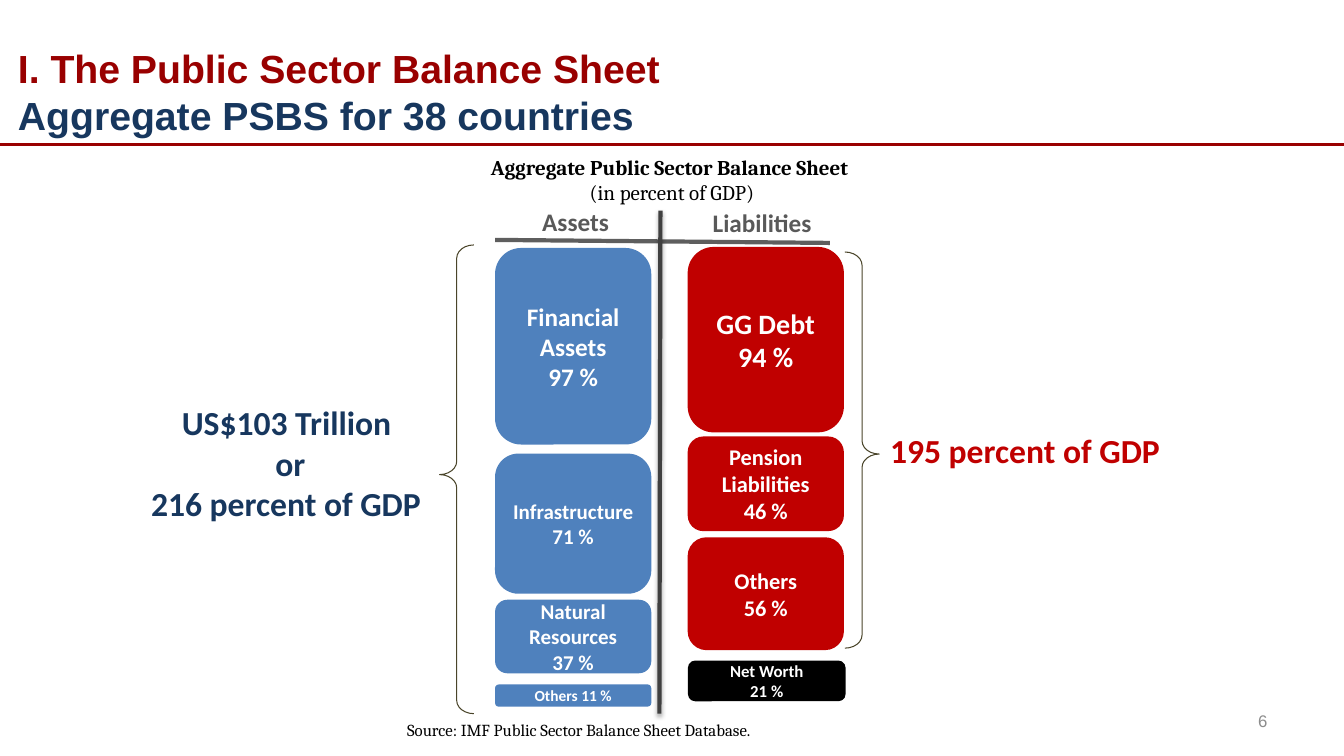
"""Build the aggregate public sector balance sheet slide."""
from lxml.etree import SubElement
from pptx import Presentation
from pptx.dml.color import RGBColor
from pptx.enum.shapes import MSO_CONNECTOR, MSO_SHAPE
from pptx.enum.text import MSO_ANCHOR, PP_ALIGN
from pptx.oxml.ns import qn
from pptx.util import Inches, Pt

COLORS = {
    "crimson": "990000", "navy": "17375E", "black": "000000", "white": "FFFFFF",
    "heading": "595959", "rule": "5E5E5E", "divider": "404040", "brace": "4A452A",
    "asset": "4F81BD", "liability": "C00000", "number": "8C8C8C",
}
LEFT, CENTER, RIGHT = PP_ALIGN.LEFT, PP_ALIGN.CENTER, PP_ALIGN.RIGHT
TOP, MIDDLE, BOTTOM = MSO_ANCHOR.TOP, MSO_ANCHOR.MIDDLE, MSO_ANCHOR.BOTTOM

# box, paragraphs, font, size, color, bold, alignments, anchor, wrap
TEXTS = [
    ((0.08, 0.17, 9.5, 1.25),
     ["I. The Public Sector Balance Sheet\vAggregate PSBS for 38 countries"],
     "Arial", 28, "crimson", True, [LEFT], BOTTOM, True),
    ((3.91, 1.48, 5.51, 0.61),
     ["Aggregate Public Sector Balance Sheet \v(in percent of GDP)"],
     "Cambria", 15, "black", True, [CENTER], TOP, True),
    ((5.28, 2, 0.87, 0.4), ["Assets"],
     "Calibri", 18, "heading", True, [LEFT], TOP, False),
    ((6.97, 2.01, 1.19, 0.4), ["Liabilities"],
     "Calibri", 18, "heading", True, [LEFT], TOP, False),
    ((1.4, 3.94, 2.96, 1.31), ["US$103 Trillion \vor", "216 percent of GDP"],
     "Calibri", 24, "navy", True, [CENTER, LEFT], TOP, True),
    ((8.73, 4.22, 3.27, 0.5), ["195 percent of GDP"],
     "Calibri", 24, "liability", True, [LEFT], TOP, True),
    ((9.56, 6.95, 3.11, 0.4), ["6"],
     "Arial", 12, "number", False, [RIGHT], MIDDLE, True),
    ((3.94, 7.09, 6.56, 0.3), ["Source: IMF Public Sector Balance Sheet Database."],
     "Cambria", 12, "black", False, [LEFT], TOP, True),
]
# start, end, color, width
LINES = {
    "title": ((0, 1.43), (13.33, 1.43), "crimson", 2.25),
    "headings": ((4.91, 2.38), (8.23, 2.41), "rule", 3),
    "divider": ((6.55, 2.09), (6.54, 7.08), "divider", 3),
}
# box, rotation
BRACES = [((4.36, 2.43, 0.34, 4.65), 0), ((8.38, 2.5, 0.34, 3.93), 180)]
BLOCK_WIDTH = 1.55
# left, color, blocks of (top, height, size, paragraphs)
COLUMNS = [
    (6.82, "liability", [
        (2.45, 1.84, 20, ["GG Debt", "94 %"]),
        (4.33, 0.94, 16, ["Pension Liabilities", "46 %"]),
        (5.33, 1.12, 16, ["Others", "56 %"]),
    ]),
    (4.91, "asset", [
        (2.46, 1.95, 18, ["Financial Assets", "97 %"]),
        (4.5, 1.39, 15, ["Infrastructure", "71 %"]),
        (5.95, 0.73, 15, ["Natural Resources", "37 %"]),
        (6.79, 0.22, 11, ["Others 11 %"]),
    ]),
    (6.83, "black", [(6.56, 0.39, 12, ["Net Worth", "21 %"])]),
]


def color_of(name):
    """Return the named color."""
    return RGBColor.from_string(COLORS[name])


def write(shape, paragraphs, font, size, color, bold, alignments, anchor, wrap=True):
    """Fill a shape with uniformly formatted paragraphs."""
    frame = shape.text_frame
    frame.text = "\n".join(paragraphs)
    frame.word_wrap = wrap
    frame.vertical_anchor = anchor
    for index, paragraph in enumerate(frame.paragraphs):
        paragraph.alignment = alignments[index % len(alignments)]
        for run in paragraph.runs:
            run.font.name = font
            run.font.size = Pt(size)
            run.font.bold = bold
            run.font.color.rgb = color_of(color)


def add_line(slide, start, end, color, width):
    """Draw a straight line and return it with its effect list."""
    line = slide.shapes.add_connector(
        MSO_CONNECTOR.STRAIGHT, *map(Inches, start + end))
    line.line.color.rgb = color_of(color)
    line.line.width = Pt(width)
    return SubElement(line.element.spPr, qn("a:effectLst"))


def add_shadow(effects):
    """Put a soft downward shadow in an effect list."""
    shadow = SubElement(effects, qn("a:outerShdw"), blurRad=str(Pt(3.1)),
                        dist=str(Pt(1.8)), dir="5400000", rotWithShape="0")
    shade = SubElement(shadow, qn("a:srgbClr"), val=COLORS["black"])
    SubElement(shade, qn("a:alpha"), val="35000")


def add_brace(slide, box, rotation):
    """Draw a thin brace."""
    brace = slide.shapes.add_shape(MSO_SHAPE.LEFT_BRACE, *map(Inches, box))
    brace.shadow.inherit = False
    brace.adjustments[0] = 0.387
    brace.adjustments[1] = 0.49
    brace.rotation = rotation
    brace.fill.background()
    brace.line.color.rgb = color_of("brace")
    brace.line.width = Pt(0.75)


def add_block(slide, left, color, top, height, size, paragraphs):
    """Draw one rounded balance sheet block."""
    block = slide.shapes.add_shape(
        MSO_SHAPE.ROUNDED_RECTANGLE, *map(Inches, (left, top, BLOCK_WIDTH, height)))
    block.shadow.inherit = False
    block.fill.solid()
    block.fill.fore_color.rgb = color_of(color)
    block.line.fill.background()
    if color == "black":
        block.line.color.rgb = color_of(color)
        block.line.width = Pt(1)
        frame = block.text_frame
        frame.margin_left = frame.margin_right = Inches(0.07)
        frame.margin_top = frame.margin_bottom = Inches(0.04)
    write(block, paragraphs, "Calibri", size, "white", True, [CENTER], MIDDLE)


def main():
    """Assemble and save the slide."""
    presentation = Presentation()
    presentation.slide_width = Inches(13.33)
    presentation.slide_height = Inches(7.5)
    slide = presentation.slides.add_slide(presentation.slide_layouts[6])
    effects = {name: add_line(slide, *line) for name, line in LINES.items()}
    add_shadow(effects["divider"])
    boxes = []
    for box, *content in TEXTS:
        boxes.append(slide.shapes.add_textbox(*map(Inches, box)))
        write(boxes[-1], *content)
    title, caption = (box.text_frame.paragraphs[0] for box in boxes[:2])
    title.runs[1].font.color.rgb = color_of("navy")
    caption.runs[1].font.bold = False
    for brace in BRACES:
        add_brace(slide, *brace)
    for left, color, blocks in COLUMNS:
        for block in blocks:
            add_block(slide, left, color, *block)
    presentation.save("out.pptx")


if __name__ == "__main__":
    main()
